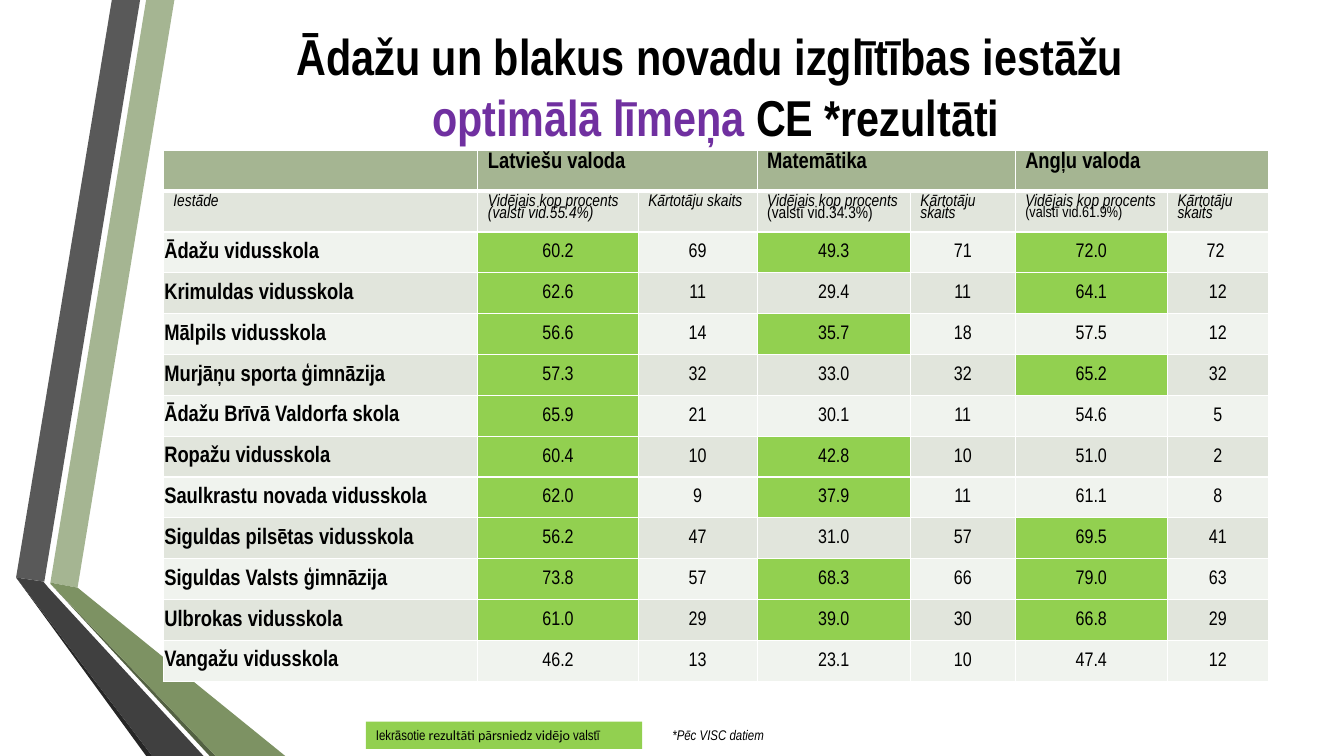
from lxml.etree import SubElement
from pptx import Presentation
from pptx.dml.color import RGBColor as Rgb
from pptx.enum.text import MSO_ANCHOR as Anchor, MSO_AUTO_SIZE as Fit, PP_ALIGN as Align
from pptx.enum.shapes import MSO_SHAPE as Shape
from pptx.oxml.ns import qn
from pptx.util import Inches, Pt

COLORS = {
    "black": "000000", "white": "FFFFFF", "purple": "7030A0",
    "head": "A5B592", "dark": "E1E5DC", "light": "F0F3EE", "above": "92D050",
    "gray": "595959", "coal": "262626", "moss": "536142", "olive": "7D9263", "slate": "404040",
}
BANDS = [
    ("head", [(0.5, 5.78), (0.77, 5.83), (1.73, 0), (1.45, 0)]),
    ("gray", [(1.39, 0), (1.11, 0), (0.16, 5.73), (0.44, 5.77)]),
    ("coal", [(0.16, 5.73), (1.45, 7.5), (1.51, 7.5)]),
    ("moss", [(0.5, 5.79), (2.08, 7.5), (2.14, 7.5)]),
    ("olive", [(0.5, 5.79), (2.14, 7.5), (2.83, 7.5), (0.77, 5.83), (0.5, 5.78)]),
    ("slate", [(2.02, 7.5), (0.48, 5.83), (0.43, 5.77), (0.16, 5.73), (1.51, 7.5)]),
]
WIDTHS = [3.12, 1.59, 1.18, 1.52, 1.04, 1.51, 1]
SUBJECTS = ["Latviešu valoda", "Matemātika", "Angļu valoda"]
MEANS = {1: 55.4, 3: 34.3, 5: 61.9}
PLAIN = {"italic": False}
COUNT = [[("Kārtotāju skaits", {})]]
LABELS = [
    [[("Iestāde", {})]],
    [[("Vidējais kop procents (valstī vid.55.4%)", {})]],
    COUNT,
    [[("Vidējais kop procents", {})], [("(valstī vid.34.3%)", PLAIN)]],
    COUNT,
    [[("Vidējais kop procents ", {}), ("(valstī vid.61.9%)", {"size": Pt(11), **PLAIN})]],
    COUNT,
]
SCHOOLS = [
    ("Ādažu vidusskola", "60.2", "69", "49.3", "71", "72.0", "72 "),
    ("Krimuldas vidusskola", "62.6", "11", "29.4", "11", "64.1", "12"),
    ("Mālpils vidusskola", "56.6", "14", "35.7", "18", "57.5", "12"),
    ("Murjāņu sporta ģimnāzija", "57.3", "32", "33.0", "32", "65.2", "32"),
    ("Ādažu Brīvā Valdorfa skola", "65.9", "21", "30.1", "11", "54.6", "5"),
    ("Ropažu vidusskola", "60.4", "10", "42.8", "10", "51.0", "2"),
    ("Saulkrastu novada vidusskola", "62.0", "9", "37.9", "11", "61.1", "8"),
    ("Siguldas pilsētas vidusskola", "56.2", "47", "31.0", "57", "69.5", "41"),
    ("Siguldas Valsts ģimnāzija", "73.8", "57", "68.3", "66", "79.0", "63"),
    ("Ulbrokas vidusskola", "61.0", "29", "39.0", "30", "66.8", "29"),
    ("Vangažu vidusskola", "46.2", "13", "23.1", "10", "47.4", "12"),
]
BOLD = {"size": Pt(16), "bold": True}
SMALL = {"size": Pt(12), "bold": False, "italic": True}
NUMBER = {"size": Pt(14), "bold": False}
NOTE = {"size": Pt(10)}


def paint(item, name):
    item.fill.solid()
    item.fill.fore_color.rgb = Rgb.from_string(COLORS[name])


def style(font, form):
    form = {"name": "Arial Narrow", "color": "black", **form}
    font.color.rgb = Rgb.from_string(COLORS[form.pop("color")])
    for key, value in form.items():
        setattr(font, key, value)


def write(frame, paras, form, align=Align.LEFT, spacing=None):
    """Write paragraphs of (text, format) runs; a bare newline breaks the line."""
    for i, runs in enumerate(paras):
        para = frame.add_paragraph() if i else frame.paragraphs[0]
        para.alignment = align
        para.line_spacing = spacing
        for text, extra in runs:
            if text == "\n":
                para.add_line_break()
                continue
            run = para.add_run()
            run.text = text
            style(run.font, {**form, **extra})


def add_band(shapes, color, points):
    first, *rest = [(Inches(x), Inches(y)) for x, y in points]
    pen = shapes.build_freeform(*first)
    pen.add_line_segments(rest, close=True)
    band = pen.convert_to_shape()
    band.shadow.inherit = False
    paint(band, color)
    band.line.fill.background()


def set_title(slide):
    title = slide.shapes.title
    slide.shapes.element.append(title.element)
    title.left, title.top, title.width, title.height = map(Inches, (1.62, 0.34, 10.96, 1.02))
    frame = title.text_frame
    frame.auto_size = Fit.NONE
    frame.vertical_anchor = Anchor.MIDDLE
    runs = [("Ādažu un blakus novadu izglītības iestāžu ", {}), ("\n", {}),
            ("optimālā līmeņa ", {"color": "purple"}), ("CE *rezultāti", {})]
    write(frame, [runs], {"size": Pt(36), "bold": True}, Align.CENTER)


def edge(cell, head):
    """Draw white borders, with a thick lower one under the head row."""
    props = cell._tc.get_or_add_tcPr()
    for i, side in enumerate(("lnL", "lnR", "lnT", "lnB")):
        width = Pt(3 if head and side == "lnB" else 1)
        line = SubElement(props, qn("a:" + side), w=str(width))
        fill = SubElement(line, qn("a:solidFill"))
        SubElement(fill, qn("a:srgbClr"), val=COLORS["white"])
        props.remove(line)
        props.insert(i, line)


def fill_school(table, row, school):
    for col, text in enumerate(school):
        cell = table.cell(row, col)
        cell.vertical_anchor = Anchor.MIDDLE
        cell.margin_left = cell.margin_right = cell.margin_top = Inches(0.01)
        cell.margin_bottom = 0
        form, align = (NUMBER, Align.CENTER) if col else (BOLD, Align.LEFT)
        write(cell.text_frame, [[(text, {})]], form, align)
        if col in MEANS and float(text) > MEANS[col]:
            paint(cell, "above")


def add_results(shapes):
    count = len(SCHOOLS) + 2
    box = map(Inches, (1.62, 1.49, 10.96, 5.27))
    table = shapes.add_table(count, len(WIDTHS), *box).table
    for col, width in zip(table.columns, WIDTHS):
        col.width = Inches(width)
    for i, row in enumerate(table.rows):
        for cell in row.cells:
            paint(cell, "dark" if i % 2 else "light" if i else "head")
            edge(cell, i == 0)
    for i, name in enumerate(SUBJECTS):
        cell = table.cell(0, 2 * i + 1)
        cell.merge(table.cell(0, 2 * i + 2))
        write(cell.text_frame, [[(name, {})]], BOLD, spacing=0.8)
    for col, paras in enumerate(LABELS):
        write(table.cell(1, col).text_frame, paras, SMALL, spacing=0.8)
    for row, school in enumerate(SCHOOLS, 2):
        fill_school(table, row, school)


def add_note(shapes):
    frame = shapes.add_textbox(*map(Inches, (6.57, 7.16, 2.67, 0.27))).text_frame
    frame.word_wrap = True
    write(frame, [[("*Pēc VISC datiem", {"italic": True})]], NOTE)


def add_legend(shapes):
    box = shapes.add_shape(Shape.RECTANGLE, *map(Inches, (3.63, 7.16, 2.74, 0.27)))
    box.shadow.inherit = False
    paint(box, "above")
    box.line.fill.background()
    box.text_frame.vertical_anchor = Anchor.TOP
    runs = [("Iekrāsotie", {}), (" rezultāti pārsniedz vidējo ", {"name": "Calibri"}), ("valstī", {})]
    write(box.text_frame, [runs], NOTE)


def main():
    deck = Presentation()
    deck.slide_width, deck.slide_height = Inches(13.33), Inches(7.5)
    slide = deck.slides.add_slide(deck.slide_layouts[5])
    for color, points in BANDS:
        add_band(slide.shapes, color, points)
    set_title(slide)
    add_results(slide.shapes)
    add_note(slide.shapes)
    add_legend(slide.shapes)
    deck.save("out.pptx")


if __name__ == "__main__":
    main()
